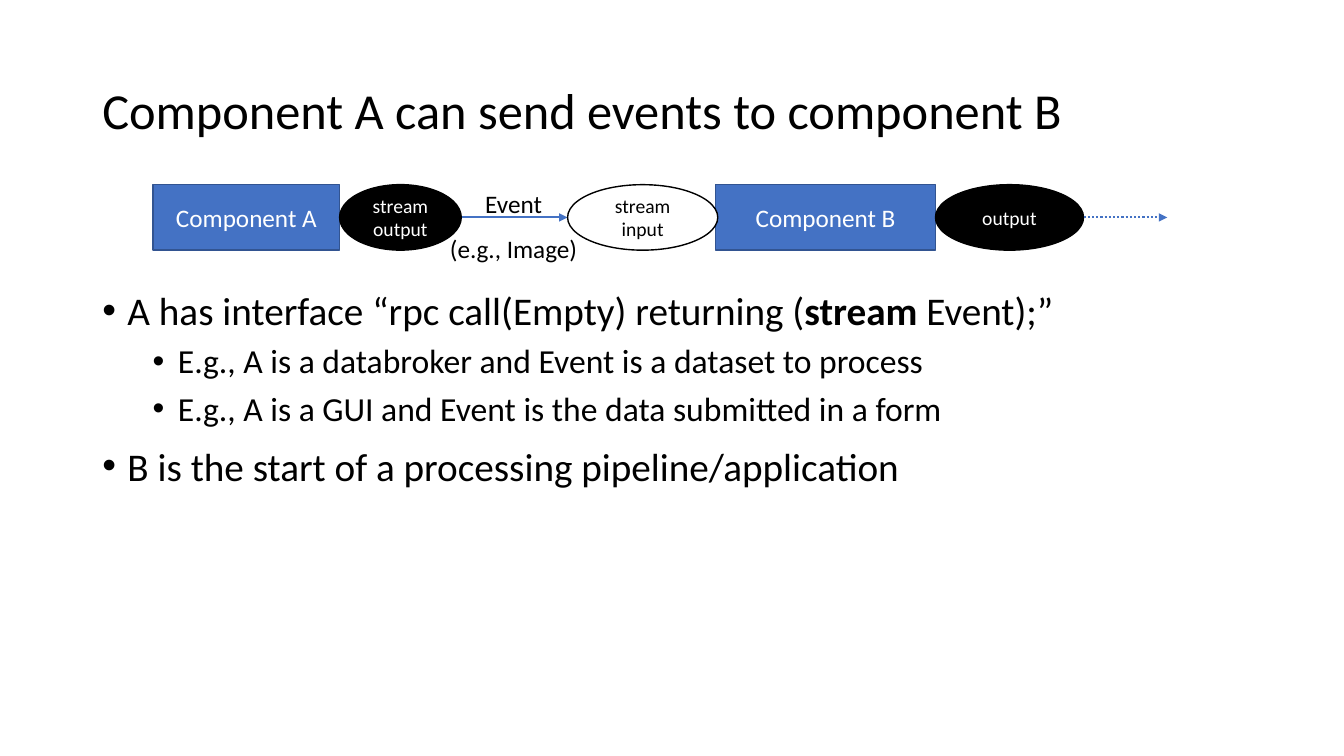
from dataclasses import dataclass

from lxml import etree
from pptx import Presentation
from pptx.dml.color import RGBColor
from pptx.enum import dml, shapes, text
from pptx.oxml import ns
from pptx.util import Pt


@dataclass(frozen=True)
class Theme:
    font: str = "Calibri"
    black: RGBColor = RGBColor(0, 0, 0)
    white: RGBColor = RGBColor(255, 255, 255)
    blue: RGBColor = RGBColor(0x44, 0x72, 0xC4)
    dark_blue: RGBColor = RGBColor(0x32, 0x54, 0x91)
    title: int = 36
    bullet: int = 28
    sub_bullet: int = 24
    label: int = 18
    port: int = 14


THEME = Theme()
ROW_TOP = 131.9
ROW_HEIGHT = 46.8
ROW_MIDDLE = ROW_TOP + ROW_HEIGHT / 2


def style(paragraph, size, color=THEME.black):
    paragraph.font.name = THEME.font
    paragraph.font.size = Pt(size)
    paragraph.font.color.rgb = color


def add_text_box(slide, left, top, width, height):
    box = slide.shapes.add_textbox(Pt(left), Pt(top), Pt(width), Pt(height))
    box.text_frame.word_wrap = True
    return box.text_frame


def add_title(slide, wording):
    frame = add_text_box(slide, 66, 28.8, 847, 104.4)
    frame.vertical_anchor = text.MSO_ANCHOR.MIDDLE
    frame.text = wording
    paragraph = frame.paragraphs[0]
    paragraph.line_spacing = 0.9
    style(paragraph, THEME.title)


def add_bullets(slide, items):
    frame = add_text_box(slide, 66, 200.9, 828, 170)
    for index, (level, runs) in enumerate(items):
        paragraph = frame.add_paragraph() if index else frame.paragraphs[0]
        for wording, bold in runs:
            run = paragraph.add_run()
            run.text = wording
            if bold:
                run.font.bold = True
        style(paragraph, THEME.sub_bullet if level else THEME.bullet)
        paragraph.level = level
        paragraph.space_before = Pt(5 if level else 10)
        properties = paragraph._p.get_or_add_pPr()
        properties.set("marL", str(Pt(18 + 36 * level)))
        properties.set("indent", str(Pt(-18)))
        etree.SubElement(properties, ns.qn("a:buFont")).set("typeface", "Arial")
        etree.SubElement(properties, ns.qn("a:buChar")).set("char", "•")


def add_event_label(slide, wording):
    frame = add_text_box(slide, 313.2, 120.2, 107.3, 69)
    frame.text = wording
    for paragraph in frame.paragraphs:
        paragraph.alignment = text.PP_ALIGN.CENTER
        paragraph.line_spacing = 1.5
        style(paragraph, THEME.label)


def add_node(slide, kind, left, width, wording, size, fill, line, color):
    shape = slide.shapes.add_shape(
        kind, Pt(left), Pt(ROW_TOP), Pt(width), Pt(ROW_HEIGHT))
    shape.shadow.inherit = False
    shape.fill.solid()
    shape.fill.fore_color.rgb = fill
    shape.line.color.rgb = line
    shape.line.width = Pt(1)
    frame = shape.text_frame
    frame.word_wrap = True
    frame.vertical_anchor = text.MSO_ANCHOR.MIDDLE
    frame.text = wording
    for paragraph in frame.paragraphs:
        paragraph.alignment = text.PP_ALIGN.CENTER
        style(paragraph, size, color)


def add_component(slide, left, width, wording):
    add_node(slide, shapes.MSO_SHAPE.RECTANGLE, left, width, wording,
             THEME.label, THEME.blue, THEME.dark_blue, THEME.white)


def add_port(slide, left, width, wording, fill, color):
    add_node(slide, shapes.MSO_SHAPE.OVAL, left, width, wording,
             THEME.port, fill, THEME.black, color)


def add_arrow(slide, start, end, dash=None):
    arrow = slide.shapes.add_connector(
        shapes.MSO_CONNECTOR.STRAIGHT,
        Pt(start), Pt(ROW_MIDDLE), Pt(end), Pt(ROW_MIDDLE))
    arrow.line.color.rgb = THEME.blue
    arrow.line.width = Pt(1.5)
    if dash is not None:
        arrow.line.dash_style = dash
    line = arrow.line._get_or_add_ln()
    etree.SubElement(line, ns.qn("a:tailEnd")).set("type", "triangle")
    etree.SubElement(arrow._element.spPr, ns.qn("a:effectLst"))


def main():
    presentation = Presentation()
    presentation.slide_width = Pt(960)
    presentation.slide_height = Pt(540)
    slide = presentation.slides.add_slide(presentation.slide_layouts[6])

    add_title(slide, "Component A can send events to component B")
    add_bullets(slide, [
        (0, [("A has interface “rpc call(Empty) returning (", False),
             ("stream", True), (" Event);”", False)]),
        (1, [("E.g., A is a databroker and Event is a dataset to process", False)]),
        (1, [("E.g., A is a GUI and Event is the data submitted in a form", False)]),
        (0, [("B is the start of a processing pipeline/application", False)]),
    ])
    add_arrow(slide, 329.5, 405.4)
    add_event_label(slide, "Event\n(e.g., Image)")
    add_component(slide, 109.4, 133.2, "Component A")
    add_port(slide, 242.6, 86.9, "stream\noutput", THEME.black, THEME.white)
    add_component(slide, 511.2, 157, "Component B")
    add_port(slide, 405.4, 107.3, "stream input", THEME.white, THEME.black)
    add_port(slide, 668.2, 105.8, "output", THEME.black, THEME.white)
    add_arrow(slide, 774, 833.8, dml.MSO_LINE.ROUND_DOT)

    presentation.save("out.pptx")


if __name__ == "__main__":
    main()
